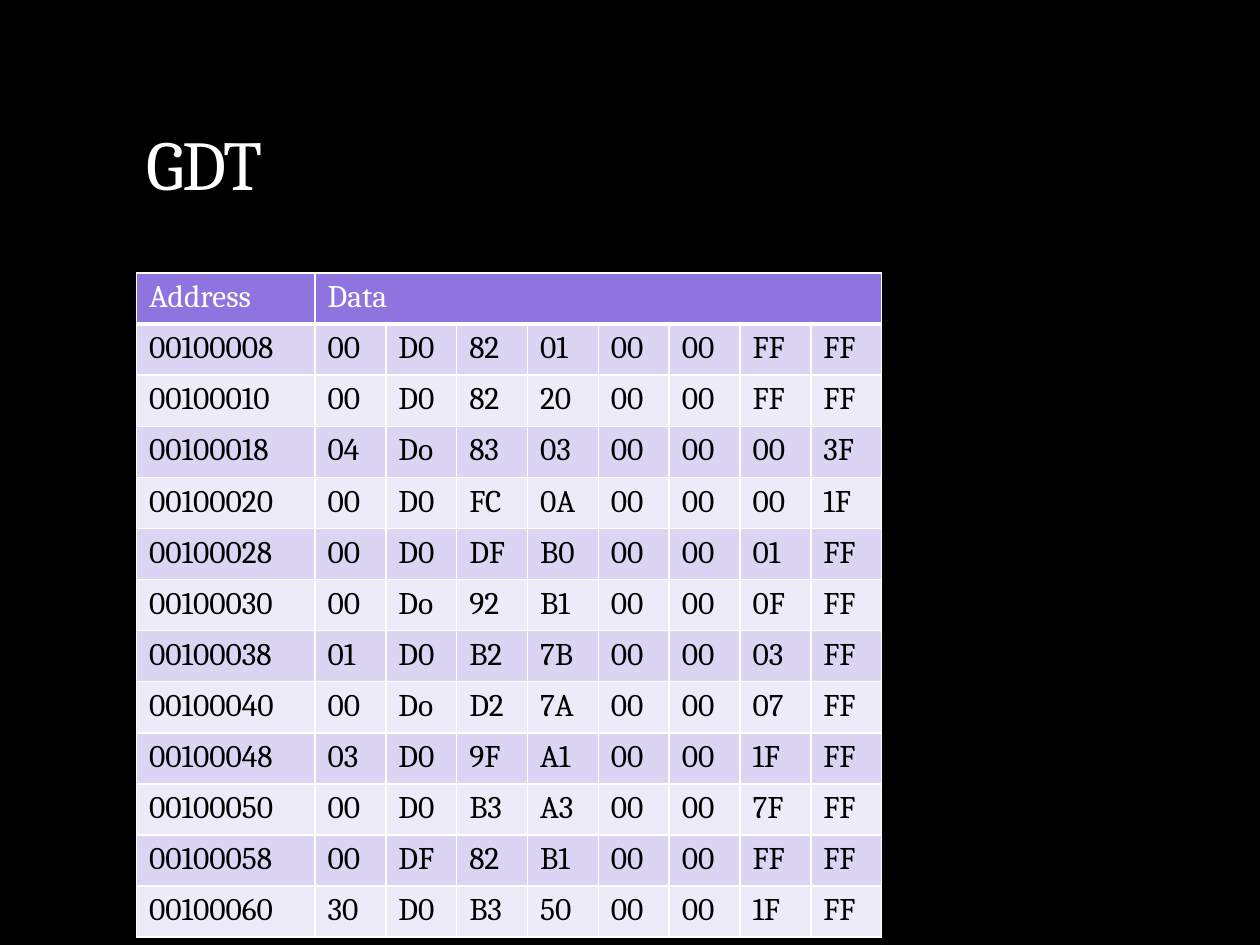
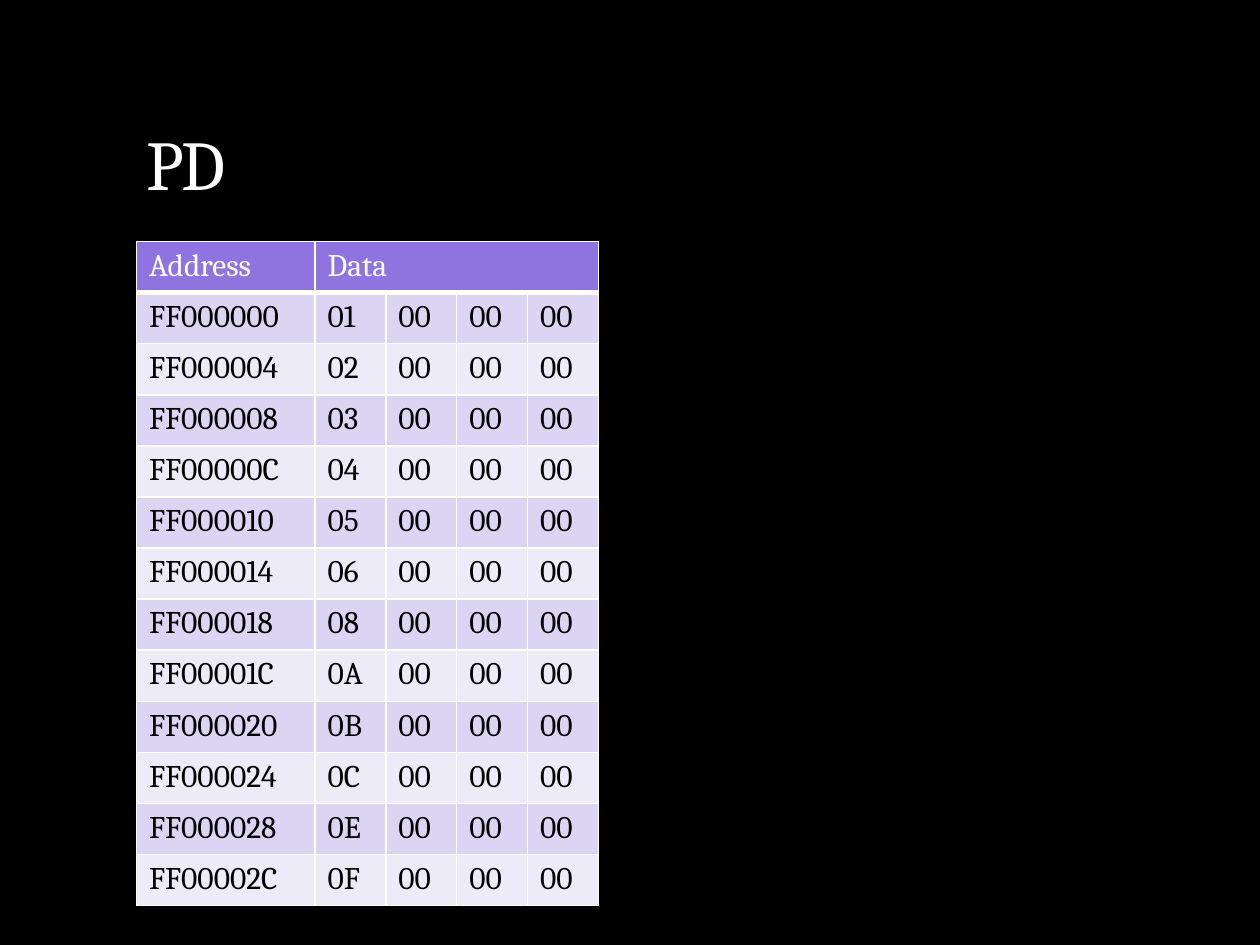
from lxml.etree import SubElement
from pptx import Presentation
from pptx.dml.color import RGBColor
from pptx.enum.text import MSO_ANCHOR
from pptx.oxml.ns import qn
from pptx.util import Pt

WHITE, BLACK, PURPLE = "FFFFFF", "000000", "8F73DF"
BANDS = ["DBD5F3", "EEEBF9"]
TITLE_FONT = {"name": "Cambria", "size": Pt(40)}
CELL_FONT = {"name": "Cambria", "size": Pt(18), "bold": False}
ADDRESS_WIDTH, BYTE_WIDTH, ROW_HEIGHT = 102, 40.5, 29.2

GDT_BYTES = """
00 D0 82 01 00 00 FF FF
00 D0 82 20 00 00 FF FF
04 Do 83 03 00 00 00 3F
00 D0 FC 0A 00 00 00 1F
00 D0 DF B0 00 00 01 FF
00 Do 92 B1 00 00 0F FF
01 D0 B2 7B 00 00 03 FF
00 Do D2 7A 00 00 07 FF
03 D0 9F A1 00 00 1F FF
00 D0 B3 A3 00 00 7F FF
00 DF 82 B1 00 00 FF FF
30 D0 B3 50 00 00 1F FF
"""
PD_FIRST_BYTES = "01 02 03 04 05 06 08 0A 0B 0C 0E 0F"

gdt_entries = [line.split() for line in GDT_BYTES.strip().splitlines()]
pd_entries = [[first, "00", "00", "00"] for first in PD_FIRST_BYTES.split()]
memory_dumps = [
    ("GDT", 156, 0x00100008, gdt_entries),
    ("PD", 138, 0xFF000000, pd_entries),
]


def rgb(value):
    return RGBColor.from_string(value)


def set_font(font, color, settings):
    for attribute, value in settings.items():
        setattr(font, attribute, value)
    font.color.rgb = rgb(color)


prs = Presentation()
prs.slide_width, prs.slide_height = Pt(720), Pt(540)
backdrop = prs.slide_master.background.fill
backdrop.solid()
backdrop.fore_color.rgb = rgb(BLACK)

for heading, top, first_address, entries in memory_dumps:
    slide = prs.slides.add_slide(prs.slide_layouts[6])

    title = slide.shapes.add_textbox(Pt(76.5), Pt(30), Pt(567), Pt(90)).text_frame
    title.word_wrap = True
    title.vertical_anchor = MSO_ANCHOR.BOTTOM
    title.paragraphs[0].line_spacing = 0.8
    title_run = title.paragraphs[0].add_run()
    title_run.text = heading
    set_font(title_run.font, WHITE, TITLE_FONT)
    title_run.font._element.set("spc", "-100")

    entry_size = len(entries[0])
    rows = [["Address", "Data"] + [""] * (entry_size - 1)]
    for index, entry in enumerate(entries):
        rows.append([f"{first_address + index * entry_size:08X}"] + entry)

    dump = slide.shapes.add_table(
        len(rows), entry_size + 1, Pt(78), Pt(top),
        Pt(ADDRESS_WIDTH + entry_size * BYTE_WIDTH), Pt(len(rows) * ROW_HEIGHT),
    ).table
    for column_index, column in enumerate(dump.columns):
        column.width = Pt(BYTE_WIDTH if column_index else ADDRESS_WIDTH)
    for row in dump.rows:
        row.height = Pt(ROW_HEIGHT)
    dump.cell(0, 1).merge(dump.cell(0, entry_size))

    for row_index, values in enumerate(rows):
        is_header = row_index == 0
        for column_index, value in enumerate(values):
            cell = dump.cell(row_index, column_index)
            cell_properties = cell._tc.get_or_add_tcPr()
            for side in ("lnL", "lnR", "lnT", "lnB"):
                width = 3 if is_header and side == "lnB" else 1
                border = SubElement(cell_properties, qn(f"a:{side}"), w=str(Pt(width)))
                border_fill = SubElement(border, qn("a:solidFill"))
                SubElement(border_fill, qn("a:srgbClr"), val=WHITE)
            cell.fill.solid()
            cell.fill.fore_color.rgb = rgb(PURPLE if is_header else BANDS[(row_index - 1) % 2])
            if value:
                cell_run = cell.text_frame.paragraphs[0].add_run()
                cell_run.text = value
                set_font(cell_run.font, WHITE if is_header else BLACK, CELL_FONT)

prs.save("out.pptx")
